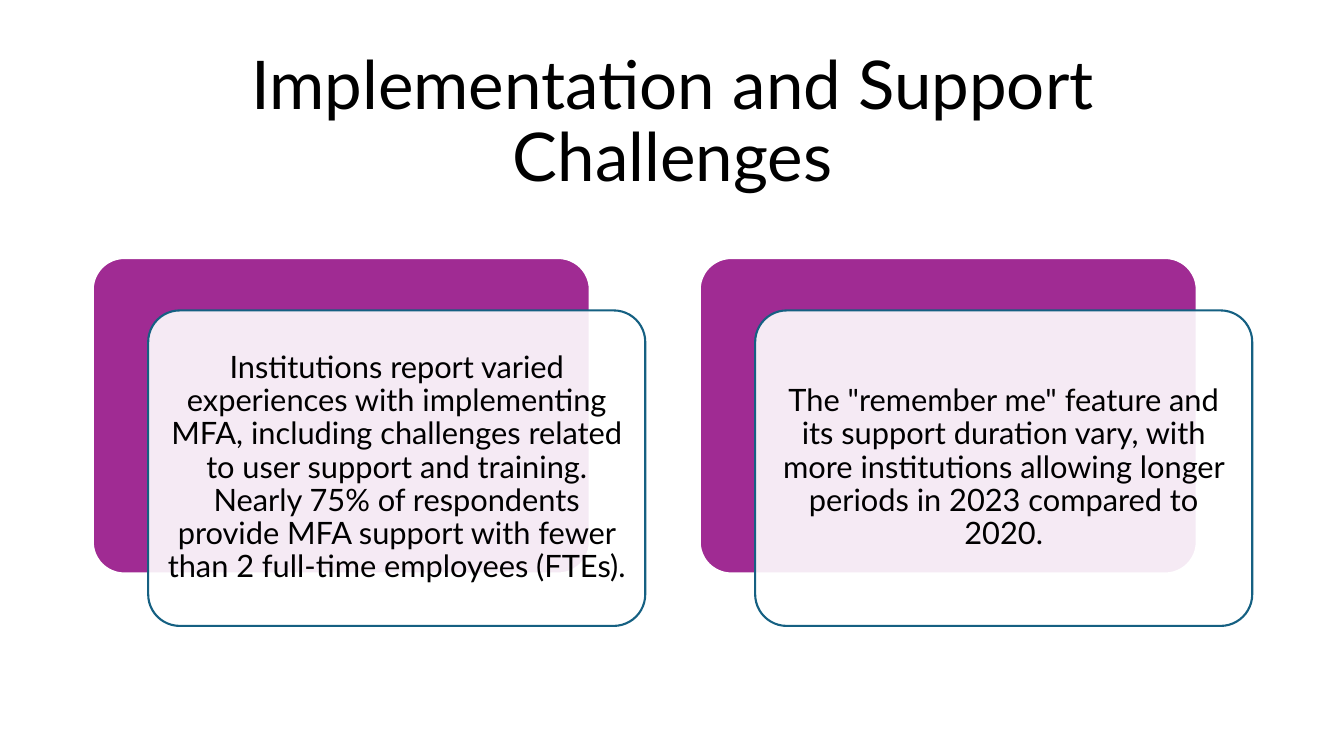
from pptx import Presentation
from pptx.dml.color import RGBColor
from pptx.enum.shapes import MSO_SHAPE
from pptx.enum.text import MSO_ANCHOR, PP_ALIGN
from pptx.oxml.ns import qn
from pptx.util import Emu, Pt
from lxml import etree

ROUNDED = MSO_SHAPE.ROUNDED_RECTANGLE
MIDDLE = MSO_ANCHOR.MIDDLE
CENTER = PP_ALIGN.CENTER

SCALE = 9144  # EMU per px, 100 px to the inch
COLORS = {"text": "000000", "white": "FFFFFF", "purple": "A02B93", "blue": "156082"}


def px(n):
    return Emu(n * SCALE)


class Deck:
    """Holds the style and the current slide."""

    font = "Lato"

    def __init__(self, width, height):
        self.prs = Presentation()
        self.prs.slide_width, self.prs.slide_height = px(width), px(height)
        self.s = self.prs.slides.add_slide(self.prs.slide_layouts[6])

    def color(self, name):
        return RGBColor.from_string(COLORS[name])

    def add_text(self, sp, text, size, inset_x, inset_y):
        tf = sp.text_frame
        tf.word_wrap = True
        tf.vertical_anchor = MIDDLE
        tf.margin_left = tf.margin_right = px(inset_x)
        tf.margin_top = tf.margin_bottom = px(inset_y)
        p = tf.paragraphs[0]
        p.alignment = CENTER
        p.line_spacing = 0.9
        r = p.add_run()
        r.text = text
        r.font.name = self.font
        r.font.size = Pt(size)
        r.font.color.rgb = self.color("text")

    def title(self, text, x, y, w, h):
        sp = self.s.shapes.add_textbox(px(x), px(y), px(w), px(h))
        self.add_text(sp, text, 48, 10, 5)

    def panel(self, x, y, w, h, fill, line, opacity=100):
        sp = self.s.shapes.add_shape(ROUNDED, px(x), px(y), px(w), px(h))
        sp.adjustments[0] = 0.1
        sp.shadow.inherit = False
        sp.fill.solid()
        sp.fill.fore_color.rgb = self.color(fill)
        sp.line.color.rgb = self.color(line)
        sp.line.width = Pt(1.5)
        if opacity < 100:
            clr = sp._element.spPr.find(qn("a:solidFill"))[0]
            etree.SubElement(clr, qn("a:alpha"), val=str(opacity * 1000))
        return sp

    def card(self, text, x, y, w, h):
        # Purple backing with a translucent text panel offset in front
        self.panel(x, y, w, h, "purple", "white")
        sp = self.panel(x + 55, y + 52, w, h, "white", "blue", opacity=90)
        self.add_text(sp, text, 22, 9, 9)


def main():
    deck = Deck(1333, 750)

    # Heading
    deck.title("Implementation and Support Challenges", 92, 61, 1150, 124)

    # Two cards side by side
    challenges = [
        "Institutions report varied experiences with implementing MFA, including "
        "challenges related to user support and training. Nearly 75% of respondents "
        "provide MFA support with fewer than 2 full-time employees (FTEs).",
        'The "remember me" feature and its support duration vary, with more '
        "institutions allowing longer periods in 2023 compared to 2020.",
    ]
    for i, text in enumerate(challenges):
        deck.card(text, 92 + 602 * i, 256, 493, 313)

    deck.prs.save("out.pptx")


if __name__ == "__main__":
    main()
